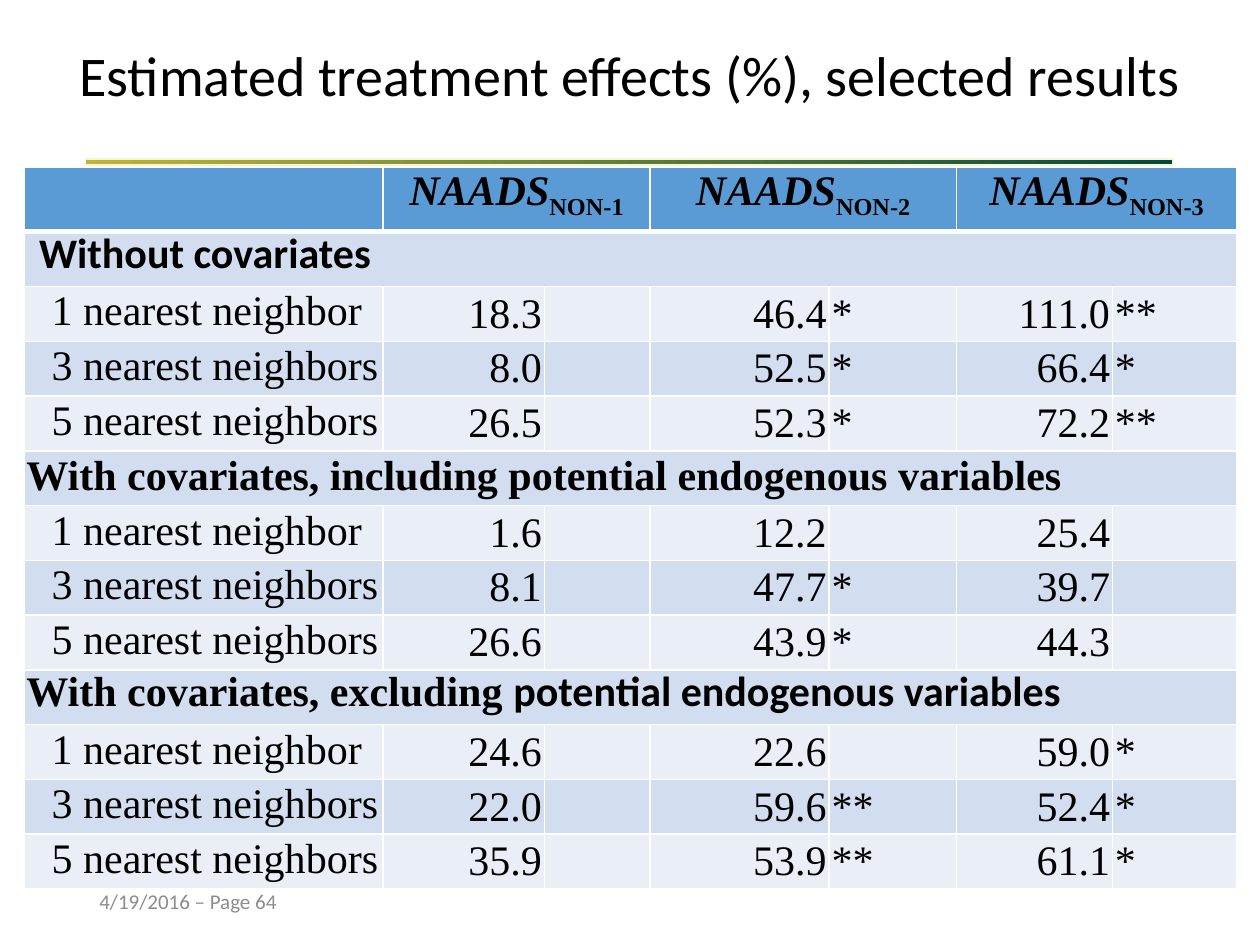
import pptx
import pptx.util
import pptx.dml.color
import pptx.enum.shapes
import pptx.enum.text
import pptx.oxml
import pptx.oxml.ns

Inches = pptx.util.Inches
Pt = pptx.util.Pt
RGBColor = pptx.dml.color.RGBColor
ALIGN = pptx.enum.text.PP_ALIGN
MIDDLE = pptx.enum.text.MSO_ANCHOR.MIDDLE

BLACK = RGBColor(0x00, 0x00, 0x00)
WHITE = RGBColor(0xFF, 0xFF, 0xFF)
GRAY = RGBColor(0x8C, 0x8C, 0x8C)
GOLD = RGBColor(0xC0, 0xB4, 0x30)
GREEN = RGBColor(0x00, 0x49, 0x3A)
CREAM = RGBColor(0xF2, 0xF5, 0xD8)
HEADER_BLUE = RGBColor(0x5B, 0x9B, 0xD5)
BANDS = [RGBColor(0xD2, 0xDE, 0xEF), RGBColor(0xEA, 0xEF, 0xF7)]
SANS = "Calibri"
SERIF = "Times New Roman"

TITLE = "Estimated treatment effects (%), selected results"
FOOTER = "4/19/2016 – Page 64"
GROUPS = ["NON-1", "NON-2", "NON-3"]
NEIGHBORS = ["1 nearest neighbor", "3 nearest neighbors", "5 nearest neighbors"]
SECTIONS = [
    ([("Without covariates", SANS)], 0.1, [
        [("18.3", ""), ("46.4", "*"), ("111.0", "**")],
        [("8.0", ""), ("52.5", "*"), ("66.4", "*")],
        [("26.5", ""), ("52.3", "*"), ("72.2", "**")],
    ]),
    ([("With covariates, including potential endogenous variables", SERIF)], 0, [
        [("1.6", ""), ("12.2", ""), ("25.4", "")],
        [("8.1", ""), ("47.7", "*"), ("39.7", "")],
        [("26.6", ""), ("43.9", "*"), ("44.3", "")],
    ]),
    ([("With covariates, excluding ", SERIF), ("potential endogenous variables", SANS)], 0, [
        [("24.6", ""), ("22.6", ""), ("59.0", "*")],
        [("22.0", ""), ("59.6", "**"), ("52.4", "*")],
        [("35.9", ""), ("53.9", "**"), ("61.1", "*")],
    ]),
]
COLUMN_WIDTHS = [2.85, 1.28, 0.84, 1.42, 1.01, 1.24, 0.99]
HEADER_HEIGHT = 0.51
TABLE_HEIGHT = 5.73
ROW_COUNT = 1 + len(SECTIONS) * (1 + len(NEIGHBORS))


def add_span(para, text, font, size, color=BLACK, bold=False, italic=False):
    span = para.add_run()
    span.text = text
    span.font.name = font
    span.font.size = Pt(size)
    span.font.color.rgb = color
    span.font.bold = bold
    span.font.italic = italic
    return span


def add_label(page, area, text, size, color, align, spacing):
    box = page.shapes.add_textbox(*map(Inches, area))
    box.text_frame.word_wrap = True
    box.text_frame.vertical_anchor = MIDDLE
    para = box.text_frame.paragraphs[0]
    para.alignment = align
    para.line_spacing = spacing
    add_span(para, text, SANS, size, color)


def style_cell(cell, color, bottom_width):
    properties = cell._tc.get_or_add_tcPr()
    for side, width in (("L", 1), ("R", 1), ("T", 1), ("B", bottom_width)):
        properties.append(pptx.oxml.parse_xml(
            f'<a:ln{side} {pptx.oxml.ns.nsdecls("a")} w="{Pt(width)}"><a:solidFill>'
            f'<a:srgbClr val="{WHITE}"/></a:solidFill></a:ln{side}>'))
    cell.fill.solid()
    cell.fill.fore_color.rgb = color
    cell.margin_left = cell.margin_right = Inches(0.02)
    cell.margin_top = cell.margin_bottom = 0
    cell.vertical_anchor = MIDDLE


def fill_cell(cell, runs, align=ALIGN.LEFT, exact=False, margin=0, indent=0, bold=False):
    para = cell.text_frame.paragraphs[0]
    para.alignment = align
    if exact:
        para.line_spacing = Pt(24)
    if margin or indent:
        properties = para._p.get_or_add_pPr()
        properties.set("marL", str(Inches(margin)))
        properties.set("indent", str(Inches(indent)))
    for text, font in runs:
        add_span(para, text, font, 24, bold=bold)


def add_results(page):
    frame = page.shapes.add_table(ROW_COUNT, len(COLUMN_WIDTHS), Inches(0.19), Inches(1.33),
                                  Inches(sum(COLUMN_WIDTHS)), Inches(TABLE_HEIGHT))
    table = frame.table
    for column, width in zip(table.columns, COLUMN_WIDTHS):
        column.width = Inches(width)
    for index, row in enumerate(table.rows):
        row.height = Inches(HEADER_HEIGHT if index == 0
                            else (TABLE_HEIGHT - HEADER_HEIGHT) / (ROW_COUNT - 1))
        for cell in row.cells:
            style_cell(cell, BANDS[(index - 1) % 2] if index else HEADER_BLUE,
                       1 if index else 3)

    for group, name in enumerate(GROUPS):
        cell = table.cell(0, 1 + 2 * group)
        cell.merge(table.cell(0, 2 + 2 * group))
        para = cell.text_frame.paragraphs[0]
        para.alignment = ALIGN.CENTER
        para.line_spacing = Pt(24)
        add_span(para, "NAADS", SERIF, 24, bold=True, italic=True)
        subscript = add_span(para, name, SERIF, 24, bold=True)
        subscript.font._element.set("baseline", "-25000")

    row = 1
    for heading, indent, results in SECTIONS:
        cell = table.cell(row, 0)
        cell.merge(table.cell(row, len(COLUMN_WIDTHS) - 1))
        fill_cell(cell, heading, exact=True, indent=indent, bold=True)
        for row, (label, effects) in enumerate(zip(NEIGHBORS, results), row + 1):
            fill_cell(table.cell(row, 0), [(label, SERIF)], exact=True, margin=0.1, indent=0.1)
            for group, (value, stars) in enumerate(effects):
                fill_cell(table.cell(row, 1 + 2 * group), [(value, SERIF)], ALIGN.RIGHT)
                if stars:
                    fill_cell(table.cell(row, 2 + 2 * group), [(stars, SERIF)])
        row += 1


def add_rule(page):
    rule = page.shapes.add_shape(pptx.enum.shapes.MSO_SHAPE.RECTANGLE,
                                 *map(Inches, (0.68, 1.26, 8.63, 0.05)))
    rule.shadow.inherit = False
    rule.fill.gradient()
    rule.fill.gradient_angle = 0
    for stop, position, color in zip(rule.fill.gradient_stops, (0, 1), (GOLD, GREEN)):
        stop.position = position
        stop.color.rgb = color
    rule.line.color.rgb = CREAM
    rule.line.width = Pt(1)


def main():
    deck = pptx.Presentation()
    deck.slide_width = Inches(10)
    deck.slide_height = Inches(7.5)
    page = deck.slides.add_slide(deck.slide_layouts[6])
    add_rule(page)
    add_label(page, (0.21, 0.08, 9.58, 1.08), TITLE, 32, BLACK, ALIGN.CENTER, 0.9)
    add_results(page)
    add_label(page, (0.69, 6.95, 2.25, 0.4), FOOTER, 12, GRAY, ALIGN.LEFT, 1.0)
    deck.save("out.pptx")


if __name__ == "__main__":
    main()
